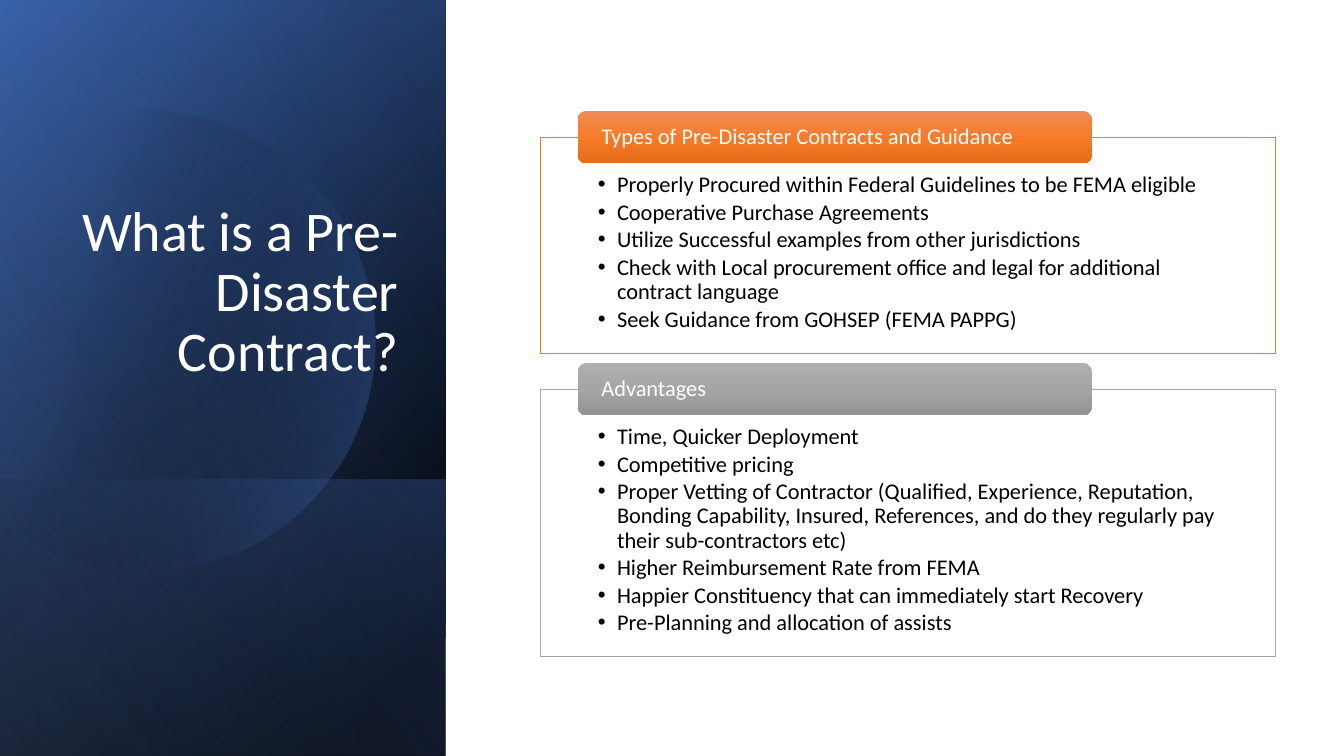
from dataclasses import dataclass

from lxml import etree
from pptx import Presentation
from pptx.dml.color import RGBColor
from pptx.enum.shapes import MSO_SHAPE
from pptx.enum.text import MSO_ANCHOR, PP_ALIGN
from pptx.oxml import parse_xml
from pptx.oxml.ns import qn
from pptx.util import Inches, Pt

RECT = MSO_SHAPE.RECTANGLE
ROUND = MSO_SHAPE.ROUNDED_RECTANGLE
TOP, MIDDLE, BOTTOM = MSO_ANCHOR.TOP, MSO_ANCHOR.MIDDLE, MSO_ANCHOR.BOTTOM
LEFT, RIGHT = PP_ALIGN.LEFT, PP_ALIGN.RIGHT
DRAWING = "http://schemas.openxmlformats.org/drawingml/2006/main"


@dataclass(frozen=True)
class Theme:
    font: str = "Calibri"
    title: int = 40
    body: int = 16
    white: str = "FFFFFF"
    black: str = "000000"
    navy: str = "2F5597"
    blue: str = "4472C4"
    pale: str = "8FAADC"
    orange: str = "ED7D31"
    gray: str = "A5A5A5"
    warm: tuple = ((0, "F18C57", 100), (50, "F67B28", 100), (100, "E56C19", 100))
    cool: tuple = ((0, "AFAFAF", 100), (50, "A5A5A5", 100), (100, "939393", 100))


def curve(start, first, second, end, steps=24):
    points = []
    for step in range(1, steps + 1):
        t = step / steps
        u = 1 - t
        points.append(tuple(
            u**3 * a + 3 * u * u * t * b + 3 * u * t * t * c + t**3 * d
            for a, b, c, d in zip(start, first, second, end)
        ))
    return points


class Deck:
    def __init__(self, theme):
        self.theme = theme
        self.show = Presentation()
        self.show.slide_width = Inches(13.33)
        self.show.slide_height = Inches(7.5)
        self.slide = self.show.slides.add_slide(self.show.slide_layouts[6])

    def shade(self, shape, stops, angle):
        shape.shadow.inherit = False
        shape.line.fill.background()
        shape.fill.background()
        marks = "".join(
            f'<a:gs pos="{place * 1000}"><a:srgbClr val="{color}">'
            f'<a:alpha val="{alpha * 1000}"/></a:srgbClr></a:gs>'
            for place, color, alpha in stops
        )
        grad = parse_xml(
            f'<a:gradFill xmlns:a="{DRAWING}" rotWithShape="1"><a:gsLst>{marks}</a:gsLst>'
            f'<a:lin ang="{angle * 60000}" scaled="0"/></a:gradFill>'
        )
        props = shape.element.spPr
        props.replace(props.find(qn("a:noFill")), grad)

    def block(self, kind, box):
        return self.slide.shapes.add_shape(kind, *map(Inches, box))

    def veil(self, box, stops, angle):
        shape = self.block(RECT, box)
        shape.rotation = 90
        shape.element.spPr.find(qn("a:xfrm")).set("flipH", "1")
        self.shade(shape, stops, angle)

    def outline(self, points, stops, angle):
        pen = self.slide.shapes.build_freeform(*map(Inches, points[0]), scale=1.0)
        pen.add_line_segments([tuple(map(Inches, point)) for point in points[1:]], close=True)
        self.shade(pen.convert_to_shape(), stops, angle)

    def label(self, shape, lines, size, color, insets, anchor=TOP, align=LEFT, gap=0):
        frame = shape.text_frame
        frame.word_wrap = True
        frame.vertical_anchor = anchor
        (frame.margin_left, frame.margin_top,
         frame.margin_right, frame.margin_bottom) = map(Inches, insets)
        frame.text = "\n".join(lines)
        for para in frame.paragraphs:
            para.alignment = align
            para.line_spacing = 0.9
            para.space_after = Pt(gap)
            for run in para.runs:
                run.font.name = self.theme.font
                run.font.size = Pt(size)
                run.font.color.rgb = RGBColor.from_string(color)
        return frame.paragraphs

    def title(self, text, box):
        shape = self.slide.shapes.add_textbox(*map(Inches, box))
        self.label(shape, [text], self.theme.title, self.theme.white,
                   (0.1, 0.05, 0.1, 0.65), BOTTOM, RIGHT)

    def panel(self, top, height, edge, stops, head, items):
        theme = self.theme
        frame = self.block(RECT, (5.36, top, 7.29, height))
        frame.shadow.inherit = False
        frame.fill.solid()
        frame.fill.fore_color.rgb = RGBColor.from_string(theme.white)
        frame.line.color.rgb = RGBColor.from_string(edge)
        frame.line.width = Pt(0.5)
        for para in self.label(frame, items, theme.body, theme.black,
                               (0.57, 0.36, 0.57, 0.12), gap=2.4):
            props = para._p.get_or_add_pPr()
            props.set("marL", str(Inches(0.19)))
            props.set("indent", str(-Inches(0.19)))
            etree.SubElement(props, qn("a:buFont")).set("typeface", "Arial")
            etree.SubElement(props, qn("a:buChar")).set("char", "•")
        tab = self.block(ROUND, (5.73, top - 0.26, 5.1, 0.52))
        self.shade(tab, stops, 90)
        self.label(tab, [head], theme.body, theme.white, (0.21, 0, 0.21, 0), MIDDLE)


def main():
    theme = Theme()
    deck = Deck(theme)
    side = (-1.54, 1.54, 7.5, 4.42)
    foot = (0.84, 3.92, 2.74, 4.42)

    deck.veil(side, [(8, theme.black, 100), (100, theme.navy, 100)], 50)
    deck.veil(side, [(0, theme.black, 0), (99, theme.blue, 46)], 30)
    deck.veil(foot, [(2, theme.blue, 29), (100, theme.black, 30)], 130)
    disc = [
        (1.49, 1.1),
        *curve((1.49, 1.1), (2.46, 1.12), (3.35, 1.77), (3.63, 2.75)),
        *curve((3.63, 2.75), (3.98, 3.97), (3.28, 5.23), (2.07, 5.58)),
        *curve((2.07, 5.58), (1.31, 5.8), (0.53, 5.61), (-0.03, 5.14)),
        (-0.15, 5.03), (-0.15, 1.75), (0, 1.61),
        *curve((0, 1.61), (0.23, 1.42), (0.5, 1.28), (0.8, 1.19)),
        *curve((0.8, 1.19), (1.03, 1.13), (1.26, 1.1), (1.49, 1.1)),
    ]
    deck.outline(disc, [(29, theme.black, 0), (100, theme.blue, 43)], 14)
    deck.veil(side, [(0, theme.black, 0), (99, theme.pale, 11)], 120)
    deck.title("What is a Pre-Disaster Contract?", (0.64, 1.84, 3.41, 2.62))

    deck.panel(1.36, 2.15, theme.orange, theme.warm,
               "Types of Pre-Disaster Contracts and Guidance", [
                   "Properly Procured within Federal Guidelines to be FEMA eligible",
                   "Cooperative Purchase Agreements",
                   "Utilize Successful examples from other jurisdictions",
                   "Check with Local procurement office and legal for additional contract language",
                   "Seek Guidance from GOHSEP (FEMA PAPPG)",
               ])
    deck.panel(3.86, 2.65, theme.gray, theme.cool, "Advantages", [
        "Time, Quicker Deployment",
        "Competitive pricing",
        "Proper Vetting of Contractor (Qualified, Experience, Reputation, Bonding "
        "Capability, Insured, References, and do they regularly pay their "
        "sub-contractors etc)",
        "Higher Reimbursement Rate from FEMA",
        "Happier Constituency that can immediately start Recovery",
        "Pre-Planning and allocation of assists",
    ])
    deck.show.save("out.pptx")


if __name__ == "__main__":
    main()
